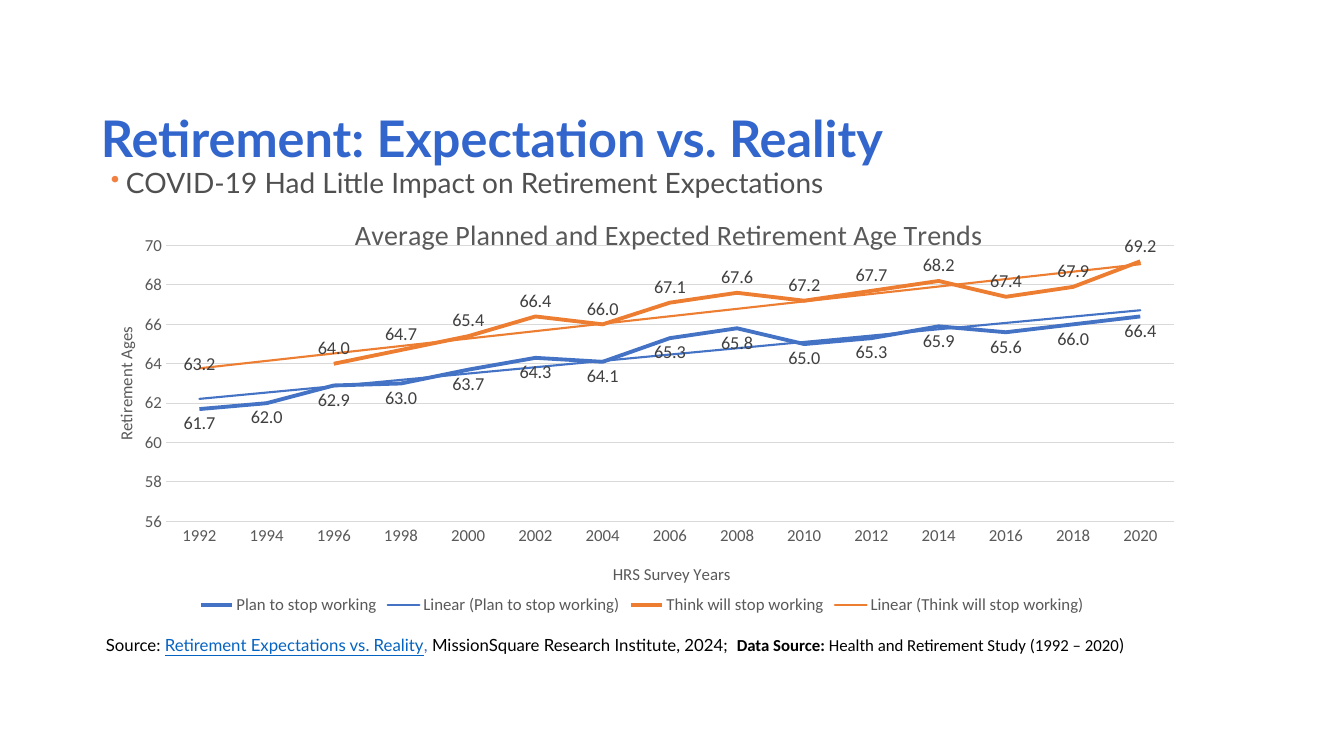
from lxml import etree
from pptx import Presentation
from pptx import util as u
from pptx.chart.data import CategoryChartData
from pptx.dml.color import RGBColor
from pptx.enum import chart as charts, text
from pptx.oxml import parse_xml
from pptx.oxml.ns import nsdecls, qn

PX = 9144  # EMU in one px, 100 px to the inch
GREY, LABEL_GREY, GRID = "595959", "404040", "D9D9D9"
BLUE, ORANGE = "4472C4", "ED7D31"
PLANNED = [61.7, 62, 62.9, 63, 63.7, 64.3, 64.1, 65.3, 65.8, 65, 65.3, 65.9, 65.6, 66, 66.4]
EXPECTED = [63.2, None, 64, 64.7, 65.4, 66.4, 66, 67.1, 67.6, 67.2, 67.7, 68.2, 67.4, 67.9, 69.2]


def color(value):
    return RGBColor.from_string(value)


def assign(target, values):
    for name, value in values.items():
        setattr(target, name, value)


def style_font(font, size, hex_color, name="Lato", **extra):
    assign(font, {"size": u.Pt(size), "name": name, **extra})
    font.color.rgb = color(hex_color)


def style_line(line, hex_color, width):
    line.color.rgb = color(hex_color)
    line.width = u.Pt(width)


def place(shape, box):
    assign(shape, dict(zip(("left", "top", "width", "height"), (n * PX for n in box))))


def set_frame(shape, anchor):
    """Give a text shape a wrapping frame without insets; return its first paragraph."""
    assign(shape.text_frame, {
        "margin_left": 0, "margin_top": 0, "margin_right": 0, "margin_bottom": 0,
        "word_wrap": True, "auto_size": text.MSO_AUTO_SIZE.NONE, "vertical_anchor": anchor})
    return shape.text_frame.paragraphs[0]


def add_text_box(slide, box, anchor, indent, hanging=0):
    shape = slide.shapes.add_textbox(*(n * PX for n in box))
    paragraph = set_frame(shape, anchor)
    properties = paragraph._p.get_or_add_pPr()
    properties.set("marL", str(indent * PX))
    properties.set("indent", str(-hanging * PX))
    return paragraph


def add_title(slide, box):
    title = slide.shapes.title
    place(title, box)
    title.text_frame.text = "Retirement: Expectation vs. Reality"
    paragraph = set_frame(title, text.MSO_ANCHOR.TOP)
    assign(paragraph, {"alignment": text.PP_ALIGN.LEFT, "line_spacing": 1.1})
    style_font(paragraph.runs[0].font, 36, "3366CC", bold=True)


def add_finding(slide, box):
    paragraph = add_text_box(slide, box, text.MSO_ANCHOR.TOP, 25, 15)
    properties = paragraph._p.get_or_add_pPr()
    for bullet in ('<a:buClr %s><a:srgbClr val="F28041"/></a:buClr>',
                   '<a:buSzPct %s val="90000"/>', '<a:buChar %s char="•"/>'):
        properties.append(parse_xml(bullet % nsdecls("a")))
    assign(paragraph, {"line_spacing": 1.1, "space_after": u.Pt(6)})
    run = paragraph.add_run()
    run.text = "COVID-19 Had Little Impact on Retirement Expectations"
    style_font(run.font, 20, "505050")


def add_source(slide, box):
    paragraph = add_text_box(slide, box, text.MSO_ANCHOR.BOTTOM, 10)
    paragraph.line_spacing = 0.9
    for wording, hex_color, name, extra in (
            ("Source: ", "000000", "Lato", {}),
            ("Retirement Expectations vs. Reality", "0563C1", "Lato", {"underline": True}),
            (", ", BLUE, "Lato", {}),
            ("MissionSquare Research Institute, 2024;  ", "000000", "Lato", {}),
            ("Data Source: ", "000000", "Calibri", {"bold": True}),
            ("Health and Retirement Study (1992 – 2020", "000000", "Calibri", {}),
            (")", "000000", "Lato", {})):
        run = paragraph.add_run()
        run.text = wording
        style_font(run.font, 12, hex_color, name, **extra)


def layout_xml(x, y, width=None, height=None):
    """Manual chart layout, in shares of the chart; a size makes it the inner plot area."""
    parts = [("layoutTarget", "inner")] if width else []
    parts += [("xMode", "edge"), ("yMode", "edge"), ("x", x), ("y", y)]
    parts += [("w", width), ("h", height)] if width else []
    inner = "".join(f'<c:{tag} val="{value}"/>' for tag, value in parts)
    return parse_xml(f'<c:layout {nsdecls("c")}><c:manualLayout>{inner}</c:manualLayout></c:layout>')


def set_layout(parent, layout, before):
    for old in parent.findall(qn("c:layout")):
        parent.remove(old)
    parent.find(qn(before)).addprevious(layout)


def set_chart_title(owner, title, wording, size, x, y):
    owner.has_title = True
    title = title or owner.axis_title
    title.text_frame.text = wording
    style_font(title.text_frame.paragraphs[0].runs[0].font, size, GREY, "Calibri", bold=False)
    element = title._element
    if element.find(qn("c:overlay")) is None:
        etree.SubElement(element, qn("c:overlay")).set("val", "0")
    set_layout(element, layout_xml(x, y), "c:overlay")


def style_series(series, hex_color, position):
    series.smooth = False
    series.marker.style = charts.XL_MARKER_STYLE.NONE
    style_line(series.format.line, hex_color, 2.75)
    labels = series.data_labels
    assign(labels, {"show_value": True, "position": position,
                    "number_format": "#,##0.0", "number_format_is_linked": False})
    style_font(labels.font, 13, LABEL_GREY, "Calibri")
    trend = parse_xml(
        f'<c:trendline {nsdecls("c", "a")}><c:spPr><a:ln w="{u.Pt(1.5)}" cap="rnd"><a:solidFill>'
        f'<a:srgbClr val="{hex_color}"/></a:solidFill></a:ln></c:spPr><c:trendlineType val="linear"/>'
        '<c:dispRSqr val="0"/><c:dispEq val="0"/></c:trendline>')
    series._element.find(qn("c:cat")).addprevious(trend)


def add_age_chart(slide, box):
    data = CategoryChartData(number_format="0.0")
    data.categories = [str(year) for year in range(1992, 2021, 2)]
    data.add_series("Plan to stop working", PLANNED)
    data.add_series("Think will stop working", EXPECTED)
    chart = slide.shapes.add_chart(
        charts.XL_CHART_TYPE.LINE, *(n * PX for n in box), data).chart
    style_font(chart.font, 10, "000000", "Calibri")
    chart.plots[0].vary_by_categories = False
    below, above = charts.XL_LABEL_POSITION.BELOW, charts.XL_LABEL_POSITION.ABOVE
    for series, hex_color, position in zip(chart.plots[0].series, (BLUE, ORANGE), (below, above)):
        style_series(series, hex_color, position)

    years, ages = chart.category_axis, chart.value_axis
    for axis in (years, ages):
        axis.major_tick_mark = axis.minor_tick_mark = charts.XL_TICK_MARK.NONE
        style_font(axis.tick_labels.font, 12, GREY, "Calibri")
    style_line(years.format.line, GRID, 1)
    ages.format.line.fill.background()
    style_line(ages.major_gridlines.format.line, GRID, 0.75)
    assign(ages, {"minimum_scale": 56, "maximum_scale": 70, "major_unit": 2})
    assign(ages.tick_labels, {"number_format": "0", "number_format_is_linked": False})

    set_chart_title(chart, chart.chart_title,
                    "Average Planned and Expected Retirement Age Trends", 20, 0.23, 0.03)
    set_chart_title(years, None, "HRS Survey Years", 12, 0.47, 0.86)
    set_chart_title(ages, None, "Retirement Ages", 12, 0.01, 0.3)
    set_layout(chart._chartSpace.chart.plotArea, layout_xml(0.06, 0.114, 0.931, 0.655), "c:lineChart")

    chart.has_legend = True
    assign(chart.legend, {"position": charts.XL_LEGEND_POSITION.BOTTOM, "include_in_layout": False})
    style_font(chart.legend.font, 12, GREY, "Calibri")


def main():
    presentation = Presentation()
    assign(presentation, {"slide_width": 1333 * PX, "slide_height": 750 * PX})
    slide = presentation.slides.add_slide(presentation.slide_layouts.get_by_name("Title Only"))
    add_title(slide, (100, 100, 1115, 130))
    add_finding(slide, (100, 161, 1116, 48))
    add_source(slide, (95, 624, 1065, 26))
    add_age_chart(slide, (100, 196, 1074, 418))
    presentation.save("out.pptx")


if __name__ == "__main__":
    main()
